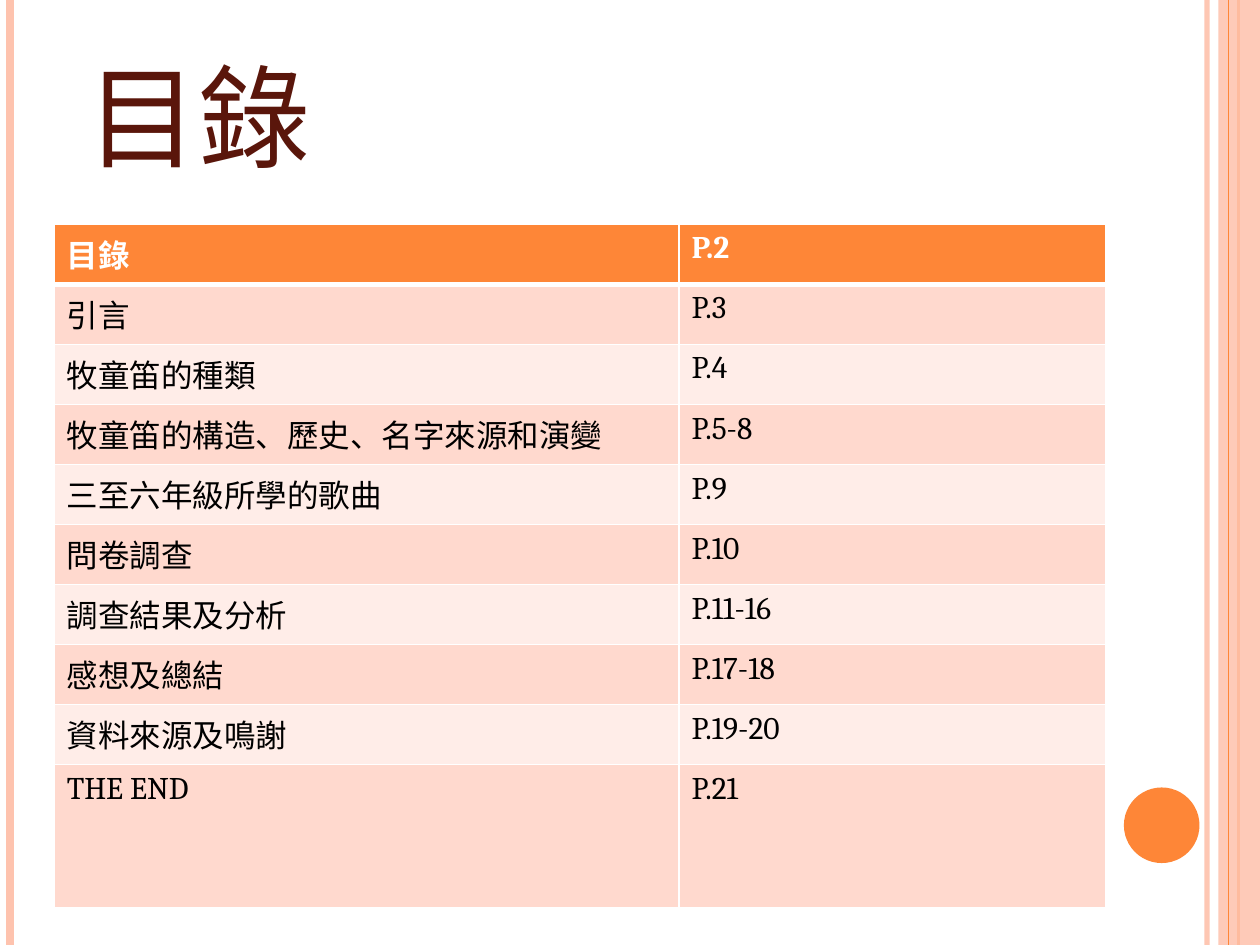
from lxml import etree
from pptx import Presentation
from pptx.dml.color import RGBColor
from pptx.enum import shapes, text
from pptx.oxml import ns
from pptx.util import Inches, Pt

ORANGE, PEACH, WHITE = "FE8637", "FEC3AE", "FFFFFF"
BANDS = ("FFEDE8", "FFD9CE")
FONT = "Cambria"


def paint(color_format, color, alpha=100):
    """Fill with a solid colour; alpha is the opacity in percent."""
    color_format.solid()
    color_format.fore_color.rgb = RGBColor.from_string(color)
    if alpha < 100:
        node = color_format._xPr.find(".//" + ns.qn("a:srgbClr"))
        etree.SubElement(node, ns.qn("a:alpha")).set("val", str(alpha * 1000))


def set_borders(cell, bottom_width):
    props = cell._tc.get_or_add_tcPr()
    widths = (("lnL", 1), ("lnR", 1), ("lnT", 1), ("lnB", bottom_width))
    for index, (side, width) in enumerate(widths):
        border = etree.Element(ns.qn("a:" + side), w=str(Pt(width)))
        fill = etree.SubElement(border, ns.qn("a:solidFill"))
        etree.SubElement(fill, ns.qn("a:srgbClr")).set("val", WHITE)
        props.insert(index, border)


deck = Presentation()
deck.slide_width, deck.slide_height = Inches(10), Inches(7.5)
page = deck.slides.add_slide(deck.slide_layouts[5])
paint(page.background.fill, WHITE)

# Side stripes: the band lies above the first three rules and below the last
stripes = [
    (9.58, PEACH, 3, 93),
    (0.08, PEACH, 4.5, 100),
    (9.83, ORANGE, 1.5, 100),
    (9.75, ORANGE, 0.75, 100),
]
for x, color, width, alpha in stripes:
    if x == 9.75:
        band = page.shapes.add_shape(
            shapes.MSO_SHAPE.RECTANGLE, Inches(9.67), 0, Inches(0.33), Inches(7.5))
        band.shadow.inherit = False
        paint(band.fill, PEACH, 87)
        band.line.fill.background()
    rule = page.shapes.add_connector(
        shapes.MSO_CONNECTOR.STRAIGHT, Inches(x), 0, Inches(x), Inches(7.5))
    rule.line.width = Pt(width)
    paint(rule.line.fill, color, alpha)
    etree.SubElement(rule._element.spPr, ns.qn("a:effectLst"))

dot = page.shapes.add_shape(
    shapes.MSO_SHAPE.OVAL, Inches(8.92), Inches(6.25), Inches(0.6), Inches(0.6))
dot.shadow.inherit = False
paint(dot.fill, ORANGE)
dot.line.fill.background()

title = page.shapes.title
title.left, title.top = Inches(0.59), Inches(0.29)
title.width, title.height = Inches(7.93), Inches(1.25)
title.text_frame.text = "目錄"
title.text_frame.vertical_anchor = text.MSO_ANCHOR.BOTTOM
title.text_frame.auto_size = text.MSO_AUTO_SIZE.NONE
para = title.text_frame.paragraphs[0]
para.alignment = text.PP_ALIGN.LEFT
span = para.runs[0]
span.font.name, span.font.size = FONT, Pt(80)
span.font.color.rgb = RGBColor.from_string("5A160B")
span.font._element.set("cap", "small")

contents = [
    ("目錄", "P.2"),
    ("引言", "P.3"),
    ("牧童笛的種類", "P.4"),
    ("牧童笛的構造、歷史、名字來源和演變", "P.5-8"),
    ("三至六年級所學的歌曲", "P.9"),
    ("問卷調查", "P.10"),
    ("調查結果及分析", "P.11-16"),
    ("感想及總結", "P.17-18"),
    ("資料來源及鳴謝", "P.19-20"),
    ("THE END", "P.21"),
]
table = page.shapes.add_table(
    len(contents), 2, Inches(0.43), Inches(1.78), Inches(8.35), Inches(5.43)).table
table.columns[0].width, table.columns[1].width = Inches(4.96), Inches(3.39)
last = len(contents) - 1
for row, entry in enumerate(contents):
    table.rows[row].height = Inches(1.14) if row == last else Inches(4.29 / last)
    header = row == 0
    for column, wording in enumerate(entry):
        cell = table.cell(row, column)
        cell.text_frame.text = wording
        font = cell.text_frame.paragraphs[0].runs[0].font
        font.name, font.size, font.bold = FONT, Pt(18), header
        font.color.rgb = RGBColor.from_string(WHITE if header else "000000")
        paint(cell.fill, ORANGE if header else BANDS[row % 2])
        set_borders(cell, 3 if header else 1)

deck.save("out.pptx")
